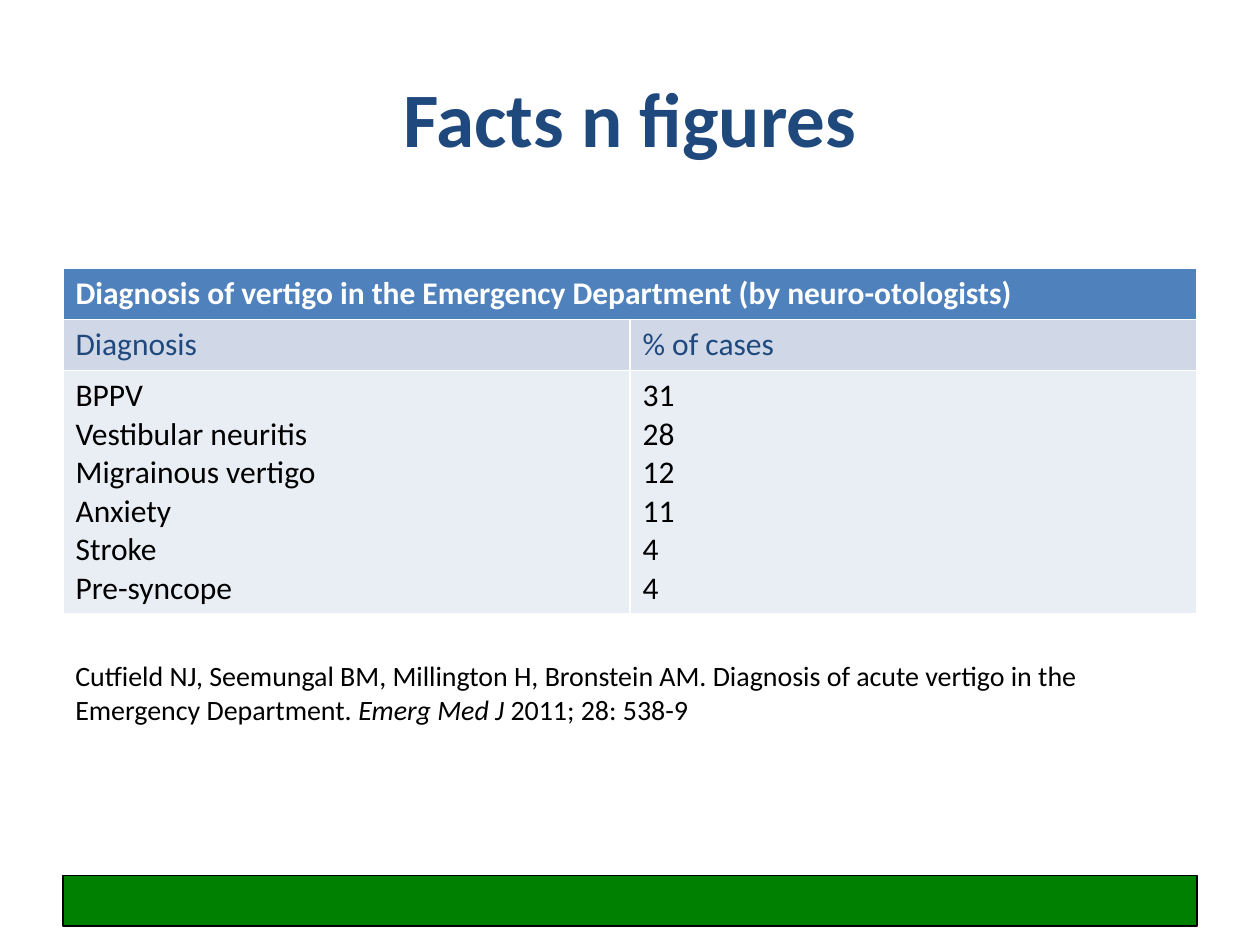
from pptx import Presentation
from pptx.dml.color import RGBColor
from pptx.enum.shapes import MSO_SHAPE
from pptx.enum.text import MSO_ANCHOR, PP_ALIGN
from pptx.util import Cm, Pt

NAVY = "1F497D"
BLACK = "000000"
WHITE = "FFFFFF"
LEFT = Cm(1.27)
WIDTH = Cm(22.86)

CASES = [
    ("BPPV", "31"),
    ("Vestibular neuritis", "28"),
    ("Migrainous vertigo", "12"),
    ("Anxiety", "11"),
    ("Stroke", "4"),
    ("Pre-syncope", "4"),
]


def color(value):
    return RGBColor.from_string(value)


def add_run(paragraph, text, size=18, fill=BLACK, bold=False, italic=False):
    run = paragraph.add_run()
    run.text = text
    run.font.name = "Calibri"
    run.font.size = Pt(size)
    run.font.color.rgb = color(fill)
    run.font.bold = bold
    run.font.italic = italic


def add_title(slide, text):
    title = slide.shapes.title
    title.left, title.top, title.width, title.height = LEFT, Cm(0.76), WIDTH, Cm(3.18)
    title.text_frame.vertical_anchor = MSO_ANCHOR.MIDDLE
    heading = title.text_frame.paragraphs[0]
    heading.alignment = PP_ALIGN.CENTER
    add_run(heading, text, size=44, fill=NAVY, bold=True)


def add_footer_bar(slide):
    bar = slide.shapes.add_shape(MSO_SHAPE.RECTANGLE, LEFT, Cm(17.65), WIDTH, Cm(1.02))
    bar.shadow.inherit = False
    bar.fill.solid()
    bar.fill.fore_color.rgb = color("008000")
    bar.line.color.rgb = color(BLACK)
    bar.line.width = Pt(0.75)


def fill_cell(cell, lines, background, **text_format):
    cell.fill.solid()
    cell.fill.fore_color.rgb = color(background)
    frame = cell.text_frame
    for index, line in enumerate(lines):
        paragraph = frame.add_paragraph() if index else frame.paragraphs[0]
        add_run(paragraph, line, **text_format)


def add_diagnosis_table(slide):
    row_heights = [Cm(1.03), Cm(1.03), Cm(4.83)]
    table = slide.shapes.add_table(3, 2, LEFT, Cm(5.41), WIDTH, sum(row_heights)).table
    for row, height in zip(table.rows, row_heights):
        row.height = height
    table.cell(0, 0).merge(table.cell(0, 1))
    heading = "Diagnosis of vertigo in the Emergency Department (by neuro-otologists)"
    fill_cell(table.cell(0, 0), [heading], "4F81BD", fill=WHITE, bold=True)
    columns = zip(("Diagnosis", "% of cases"), zip(*CASES))
    for index, (label, entries) in enumerate(columns):
        fill_cell(table.cell(1, index), [label], "D0D8E8", fill=NAVY)
        fill_cell(table.cell(2, index), entries, "E9EDF4")


def add_citation(slide, parts):
    frame = slide.shapes.add_textbox(LEFT, Cm(13.16), WIDTH, Cm(1.63)).text_frame
    frame.word_wrap = True
    for text, italic in parts:
        add_run(frame.paragraphs[0], text, size=16, italic=italic)


def main():
    deck = Presentation()
    deck.slide_width, deck.slide_height = Cm(25.4), Cm(19.05)
    slide = deck.slides.add_slide(deck.slide_layouts[5])
    add_footer_bar(slide)
    add_title(slide, "Facts n figures")
    add_diagnosis_table(slide)
    add_citation(slide, [
        ("Cutfield NJ, Seemungal BM, Millington H, Bronstein AM. "
         "Diagnosis of acute vertigo in the Emergency Department. ", False),
        ("Emerg Med J ", True),
        ("2011; 28: 538-9", False),
    ])
    deck.save("out.pptx")


if __name__ == "__main__":
    main()
